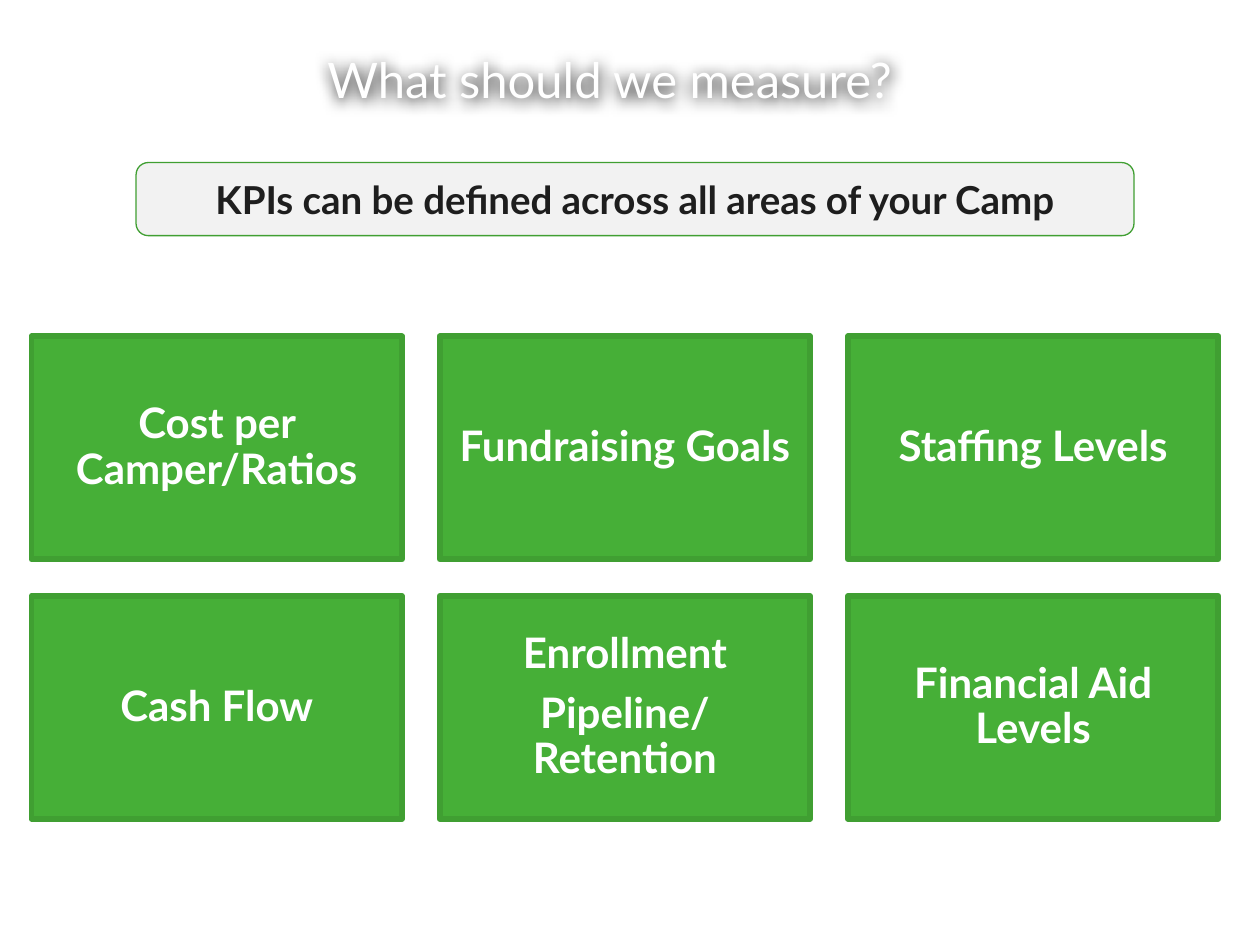
from lxml.etree import SubElement
from pptx import Presentation
from pptx.dml.color import RGBColor
from pptx.enum.shapes import MSO_SHAPE
from pptx.enum.text import MSO_ANCHOR, PP_ALIGN
from pptx.oxml.ns import qn
from pptx.util import Pt

PX = 9144
WHITE = RGBColor(0xFF, 0xFF, 0xFF)
GREEN = RGBColor(0x46, 0xAF, 0x37)
DARK_GREEN = RGBColor(0x40, 0x9F, 0x32)
PALE_GRAY = RGBColor(0xF2, 0xF2, 0xF2)
INK = RGBColor(0x1E, 0x1E, 0x1E)


def write_text(s, text, size, color, bold=True, align=PP_ALIGN.CENTER,
               spacing=None, after=0, inset=None):
    tf = s.text_frame
    tf.word_wrap = True
    tf.vertical_anchor = MSO_ANCHOR.MIDDLE
    if inset is not None:
        tf.margin_left = tf.margin_right = inset * PX
        tf.margin_top = tf.margin_bottom = inset * PX
    for i, line in enumerate(text.split("\n")):
        p = tf.add_paragraph() if i else tf.paragraphs[0]
        p.alignment = align
        p.line_spacing = spacing
        p.space_after = Pt(after)
        r = p.add_run()
        r.text = line
        r.font.name = "Lato"
        r.font.size = Pt(size)
        r.font.bold = bold
        r.font.color.rgb = color


def add_box(shape, x, y, w, h, fill, weight):
    s = slide.shapes.add_shape(shape, x * PX, y * PX, w * PX, h * PX)
    s.shadow.inherit = False
    s.fill.solid()
    s.fill.fore_color.rgb = fill
    s.line.color.rgb = DARK_GREEN
    s.line.width = Pt(weight)
    return s


prs = Presentation()
prs.slide_width = 1000 * PX
prs.slide_height = 750 * PX
slide = prs.slides.add_slide(prs.slide_layouts[6])

title = slide.shapes.add_textbox(250 * PX, 15 * PX, 700 * PX, 95 * PX)
write_text(title, "What should we measure?", 28, WHITE, bold=False, align=PP_ALIGN.LEFT)
effects = SubElement(title.element.spPr, qn("a:effectLst"))
shadow = SubElement(effects, qn("a:outerShdw"), blurRad=str(Pt(8.5)), dist=str(Pt(1)),
                    dir="5400000", algn="ctr", rotWithShape="0")
SubElement(shadow, qn("a:srgbClr"), val="000000")

areas = [
    "Cost per Camper/Ratios", "Fundraising Goals", "Staffing Levels",
    "Cash Flow", "Enrollment\nPipeline/Retention", "Financial Aid Levels",
]
for i, area in enumerate(areas):
    row, col = divmod(i, 3)
    s = add_box(MSO_SHAPE.RECTANGLE, 25 + col * 324, 267 + row * 206, 294, 177, GREEN, 3.35)
    write_text(s, area, 24, WHITE, spacing=0.9, after=8.4, inset=10)

banner = add_box(MSO_SHAPE.ROUNDED_RECTANGLE, 108, 129, 792, 58, PALE_GRAY, 0.75)
write_text(banner, "KPIs can be defined across all areas of your Camp", 22, INK)

prs.save("out.pptx")
